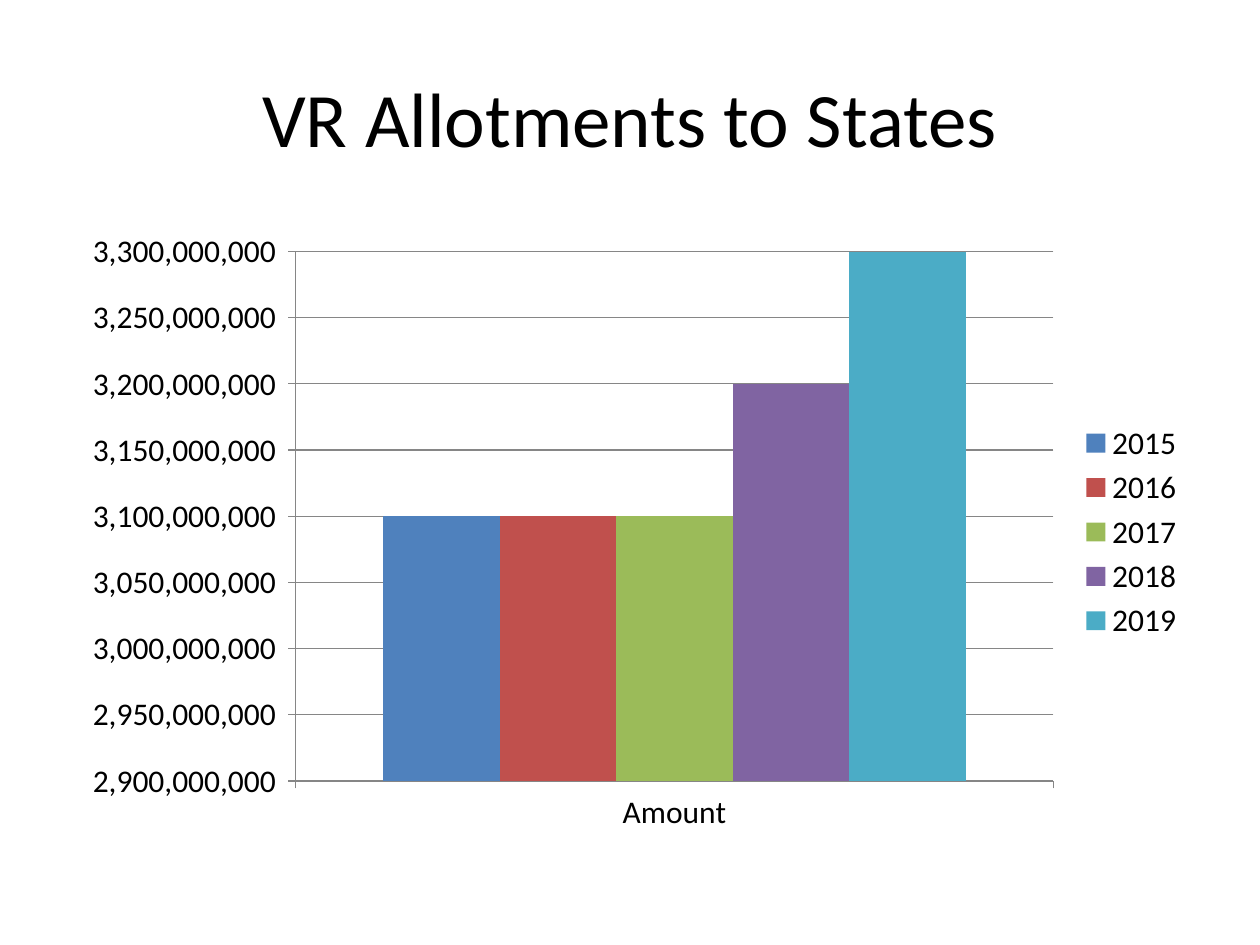
"""Build a slide with a column chart of yearly VR allotments to states."""
from pptx import Presentation, util as u
from pptx.chart.data import CategoryChartData
from pptx.dml.color import RGBColor
from pptx.enum import chart as c, text

TITLE = "VR Allotments to States"
CATEGORY = "Amount"
MILLION = 1_000_000
ALLOTMENTS = [
    ("2015", 3100, "4F81BD"),
    ("2016", 3100, "C0504D"),
    ("2017", 3100, "9BBB59"),
    ("2018", 3200, "8064A2"),
    ("2019", 3300, "4BACC6"),
]
FONT, BLACK, GRAY = "Calibri", "000000", "868686"
NUMBER_FORMAT = '_(* #,##0_);_(* \\(#,##0\\);_(* "-"??_);_(@_)'
TITLE_BOX = (63, 38, 1134, 157)
CHART_BOX = (63, 220, 1134, 624)


def px(length):
    return u.Emu(round(length * u.Inches(1) / 126))


def color(value):
    return RGBColor.from_string(value)


def set_font(font, size):
    font.name, font.size = FONT, u.Pt(size)
    font.color.rgb = color(BLACK)


def set_line(line):
    line.color.rgb = color(GRAY)
    line.width = u.Pt(0.75)


def add_title(slide):
    title = slide.shapes.title
    title.left, title.top, title.width, title.height = map(px, TITLE_BOX)
    frame = title.text_frame
    frame.text = TITLE
    frame.vertical_anchor = text.MSO_ANCHOR.MIDDLE
    paragraph = frame.paragraphs[0]
    paragraph.alignment = text.PP_ALIGN.CENTER
    set_font(paragraph.font, 44)


def add_allotment_chart(slide):
    data = CategoryChartData(number_format=NUMBER_FORMAT)
    data.categories = [CATEGORY]
    for year, millions, _ in ALLOTMENTS:
        data.add_series(year, [millions * MILLION])
    chart = slide.shapes.add_chart(
        c.XL_CHART_TYPE.COLUMN_CLUSTERED, *map(px, CHART_BOX), data).chart
    set_font(chart.font, 18)
    chart.has_title = False
    chart.has_legend = True
    chart.legend.position = c.XL_LEGEND_POSITION.RIGHT
    chart.legend.include_in_layout = False

    plot = chart.plots[0]
    plot.gap_width, plot.overlap = 150, 0
    plot.vary_by_categories = False
    for series, (_, _, fill) in zip(plot.series, ALLOTMENTS):
        series.format.fill.solid()
        series.format.fill.fore_color.rgb = color(fill)

    values = chart.value_axis
    values.minimum_scale, values.maximum_scale = 2900 * MILLION, 3300 * MILLION
    values.major_unit = 50 * MILLION
    values.tick_labels.number_format = NUMBER_FORMAT
    values.tick_labels.number_format_is_linked = False
    values.has_major_gridlines = True
    set_line(values.major_gridlines.format.line)
    for axis in (values, chart.category_axis):
        axis.major_tick_mark = c.XL_TICK_MARK.OUTSIDE
        set_line(axis.format.line)


def main():
    presentation = Presentation()
    presentation.slide_width, presentation.slide_height = px(1260), px(945)
    slide = presentation.slides.add_slide(presentation.slide_layouts[5])
    add_title(slide)
    add_allotment_chart(slide)
    presentation.save("out.pptx")


if __name__ == "__main__":
    main()
